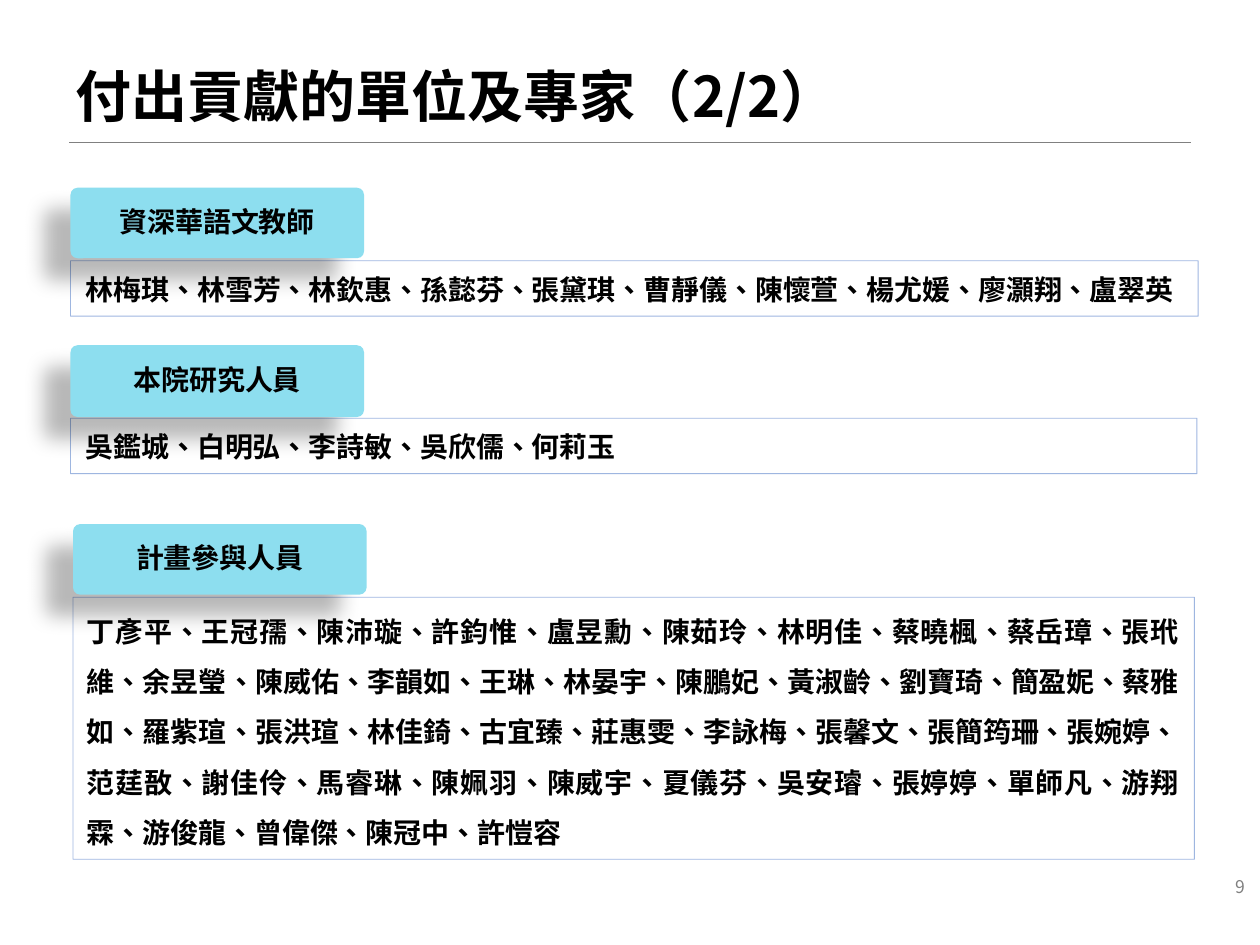
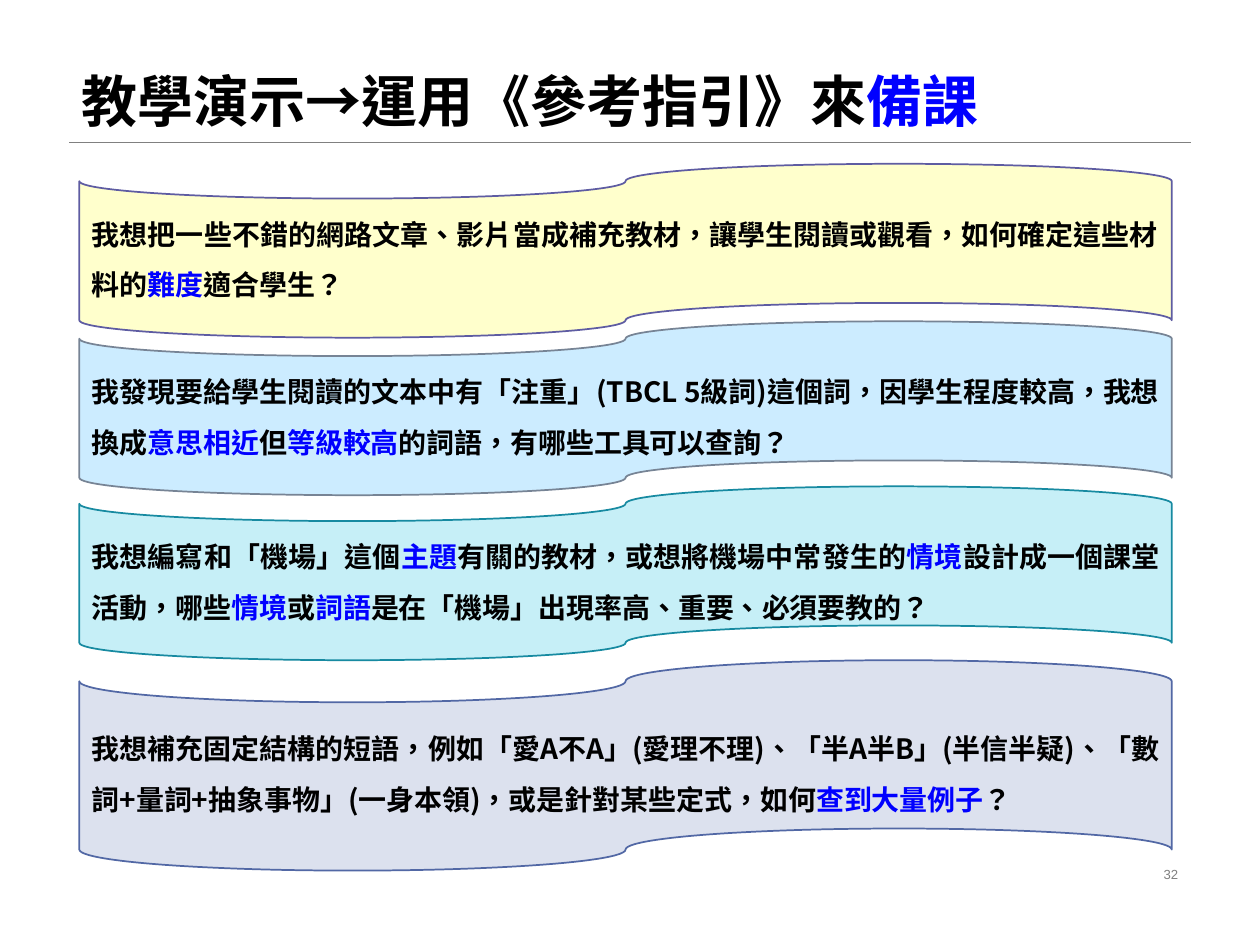
"""Build two slides: contributors to a project and lesson-planning questions."""
from dataclasses import dataclass

from lxml import etree
from pptx import Presentation
from pptx import util as u
from pptx.dml.color import RGBColor
from pptx.enum import shapes, text
from pptx.oxml import ns

CJK = "Noto Sans CJK SC"
LATIN = "Arial"
LANGUAGE = "zh-TW"
BLACK, BLUE, GREY, WHITE = "000000", "0000FF", "808080", "FFFFFF"
LABEL_FILL, NAMES_LINE = "8DDEEF", "3F6EC3"
MIDDLE, BOTTOM = text.MSO_ANCHOR.MIDDLE, text.MSO_ANCHOR.BOTTOM
LEFT, CENTER = text.PP_ALIGN.LEFT, text.PP_ALIGN.CENTER
RIGHT, JUSTIFY = text.PP_ALIGN.RIGHT, text.PP_ALIGN.JUSTIFY


@dataclass
class Box:
    """A place on the slide, in inches."""
    left: float
    top: float
    width: float
    height: float

    def lengths(self) -> list:
        """Return the place as slide lengths."""
        return [u.Inches(n) for n in (self.left, self.top, self.width, self.height)]


@dataclass
class Style:
    """The look of one paragraph."""
    size: float = 16
    font: str = CJK
    color: str = BLACK
    bold: bool = True
    align: int = LEFT
    spacing: float = 1.0
    anchor: int = MIDDLE
    insets: tuple = (0.1, 0.05, 0.1, 0.05)


@dataclass
class Group:
    """A labelled list of people."""
    label: str
    names: str
    label_box: Box
    names_box: Box
    style: Style


@dataclass
class Question:
    """A question on a tape; asterisks enclose the blue words."""
    words: str
    top: float
    height: float
    fill: str
    line: str


TITLE = Style(32, spacing=0.9, anchor=BOTTOM)
LATIN_TITLE = Style(32, LATIN, spacing=0.9, anchor=BOTTOM)
LABEL = Style(align=CENTER, spacing=0.9, insets=(0.25, 0.01, 0.25, 0.01))
NAMES_INSETS = (0.12, 0.17, 0.12, 0.08)
NAMES = Style(anchor=BOTTOM, insets=NAMES_INSETS)
TIGHT_NAMES = Style(spacing=0.9, anchor=BOTTOM, insets=NAMES_INSETS)
LONG_NAMES = Style(align=JUSTIFY, spacing=1.5, anchor=BOTTOM,
                   insets=(0.11, 0.17, 0.11, 0.08))
QUESTION = Style(align=JUSTIFY, spacing=1.5)

GROUPS = [
    Group("資深華語文教師",
          "林梅琪、林雪芳、林欽惠、孫懿芬、張黛琪、曹靜儀、陳懷萱、楊尤媛、廖灝翔、盧翠英",
          Box(0.56, 1.49, 2.33, 0.56), Box(0.56, 2.07, 8.95, 0.44), NAMES),
    Group("本院研究人員", "吳鑑城、白明弘、李詩敏、吳欣儒、何莉玉",
          Box(0.56, 2.74, 2.33, 0.57), Box(0.56, 3.32, 8.94, 0.44), TIGHT_NAMES),
    Group("計畫參與人員",
          "丁彥平、王冠孺、陳沛璇、許鈞惟、盧昱勳、陳茹玲、林明佳、蔡曉楓、蔡岳璋、張玳維、"
          "余昱瑩、陳威佑、李韻如、王琳、林晏宇、陳鵬妃、黃淑齡、劉寶琦、簡盈妮、蔡雅如、"
          "羅紫瑄、張洪瑄、林佳錡、古宜臻、莊惠雯、李詠梅、張馨文、張簡筠珊、張婉婷、范莛敔、"
          "謝佳伶、馬睿琳、陳姵羽、陳威宇、夏儀芬、吳安璿、張婷婷、單師凡、游翔霖、游俊龍、"
          "曾偉傑、陳冠中、許愷容",
          Box(0.58, 4.16, 2.33, 0.56), Box(0.58, 4.74, 8.9, 2.08), LONG_NAMES),
]

QUESTIONS = [
    Question("我想把一些不錯的網路文章、影片當成補充教材，讓學生閱讀或觀看，"
             "如何確定這些材料的*難度*適合學生？", 1.3, 1.38, "FFFFCC", "5E5CA2"),
    Question("我發現要給學生閱讀的文本中有「注重」(TBCL 5級詞)這個詞，因學生程度較高，"
             "我想換成*意思相近*但*等級較高*的詞語，有哪些工具可以查詢？",
             2.55, 1.38, "CCECFF", "778495"),
    Question("我想編寫和「機場」這個*主題*有關的教材，或想將機場中常發生的*情境*設計成一個"
             "課堂活動，哪些*情境*或*詞語*是在「機場」出現率高、重要、必須要教的？",
             3.86, 1.38, "C6EFF7", "178AA1"),
    Question("我想補充固定結構的短語，例如「愛A不A」(愛理不理)、「半A半B」(半信半疑)、"
             "「數詞+量詞+抽象事物」(一身本領)，或是針對某些定式，如何*查到大量例子*？",
             5.24, 1.67, "DCE1EE", "5268A5"),
]


def rgb(value: str) -> RGBColor:
    """Turn a hex string into a colour."""
    return RGBColor.from_string(value)


def write(shape, words: str, style: Style) -> None:
    """Write one paragraph, with the words between asterisks in blue."""
    frame = shape.text_frame
    frame.word_wrap = True
    frame.auto_size = text.MSO_AUTO_SIZE.NONE
    frame.vertical_anchor = style.anchor
    frame.margin_left, frame.margin_top, frame.margin_right, frame.margin_bottom = (
        u.Inches(inset) for inset in style.insets)
    para = frame.paragraphs[0]
    para.alignment = style.align
    para.line_spacing = style.spacing
    para._p.get_or_add_pPr().set("hangingPunct", "0")
    for index, part in enumerate(words.split("*")):
        if not part:
            continue
        span = para.add_run()
        span.text = part
        span.font.name = style.font
        span.font.size = u.Pt(style.size)
        span.font.bold = style.bold
        span.font.color.rgb = rgb(BLUE if index % 2 else style.color)
        properties = span.font._element
        properties.set("lang", LANGUAGE)
        east_asian = etree.Element(ns.qn("a:ea"), typeface=CJK)
        properties.find(ns.qn("a:latin")).addnext(east_asian)


def add_box(page, kind, box: Box, fill: str = "", line: str = "", weight: float = 1):
    """Add a preset shape without a shadow."""
    shape = page.shapes.add_shape(kind, *box.lengths())
    shape.shadow.inherit = False
    if fill:
        shape.fill.solid()
        shape.fill.fore_color.rgb = rgb(fill)
    else:
        shape.fill.background()
    if line:
        shape.line.color.rgb = rgb(line)
        shape.line.width = u.Pt(weight)
    else:
        shape.line.fill.background()
    return shape


def set_alpha(color, percent: int) -> None:
    """Set the opacity of a colour element."""
    etree.SubElement(color, ns.qn("a:alpha"), val=str(percent * 1000))


def cast_shadow(shape) -> None:
    """Give a label its soft shadow to the lower left."""
    effects = shape._element.spPr.find(ns.qn("a:effectLst"))
    shadow = etree.SubElement(
        effects, ns.qn("a:outerShdw"), blurRad=str(u.Pt(11.8)),
        dist=str(u.Pt(19.7)), dir=str(141 * 60000), algn="ctr", rotWithShape="0")
    set_alpha(etree.SubElement(shadow, ns.qn("a:srgbClr"), val=BLACK), 28)


def add_page(deck, title: str, title_box: Box, title_style: Style,
             number: str, number_box: Box, number_style: Style):
    """Add a slide with its title, title rule and page number."""
    page = deck.slides.add_slide(deck.slide_layouts[5])
    page.background.fill.solid()
    page.background.fill.fore_color.rgb = rgb(WHITE)
    rule = page.shapes.add_connector(
        shapes.MSO_CONNECTOR.STRAIGHT, u.Inches(0.55), u.Inches(1.13),
        u.Inches(9.45), u.Inches(1.13))
    rule.line.color.rgb = rgb(GREY)
    rule.line.width = u.Pt(0.25)
    etree.SubElement(rule._element.spPr, ns.qn("a:effectLst"))
    heading = page.shapes.title
    heading.left, heading.top, heading.width, heading.height = title_box.lengths()
    write(heading, title, title_style)
    write(page.shapes.add_textbox(*number_box.lengths()), number, number_style)
    return page


def add_group(page, group: Group) -> None:
    """Draw a framed list of names and its label."""
    names = add_box(page, shapes.MSO_SHAPE.RECTANGLE, group.names_box,
                    line=NAMES_LINE, weight=0.5)
    set_alpha(names.line._ln.find(".//" + ns.qn("a:srgbClr")), 50)
    write(names, group.names, group.style)
    label = add_box(page, shapes.MSO_SHAPE.ROUNDED_RECTANGLE, group.label_box, LABEL_FILL)
    label.adjustments[0] = 0.1
    cast_shadow(label)
    write(label, group.label, LABEL)


def add_question(page, question: Question) -> None:
    """Draw a question on a punched tape."""
    tape = add_box(page, shapes.MSO_SHAPE.FLOWCHART_PUNCHED_TAPE,
                   Box(0.63, question.top, 8.67, question.height),
                   question.fill, question.line)
    write(tape, question.words, QUESTION)


def main() -> None:
    """Build and save the deck."""
    deck = Presentation()
    deck.slide_width, deck.slide_height = u.Inches(10), u.Inches(7.5)
    people = add_page(deck, "付出貢獻的單位及專家（2/2）", Box(0.5, 0.14, 9, 0.94), TITLE,
                      "9", Box(9.48, 6.84, 0.5, 0.39),
                      Style(10, color=GREY, bold=False, align=RIGHT))
    for group in GROUPS:
        add_group(people, group)
    planning = add_page(deck, "教學演示→運用《參考指引》來*備課*", Box(0.55, 0, 8.9, 1.12),
                        LATIN_TITLE, "32", Box(7.06, 6.82, 2.39, 0.23),
                        Style(7.5, LATIN, GREY, False, RIGHT))
    for question in QUESTIONS:
        add_question(planning, question)
    deck.save("out.pptx")


if __name__ == "__main__":
    main()
